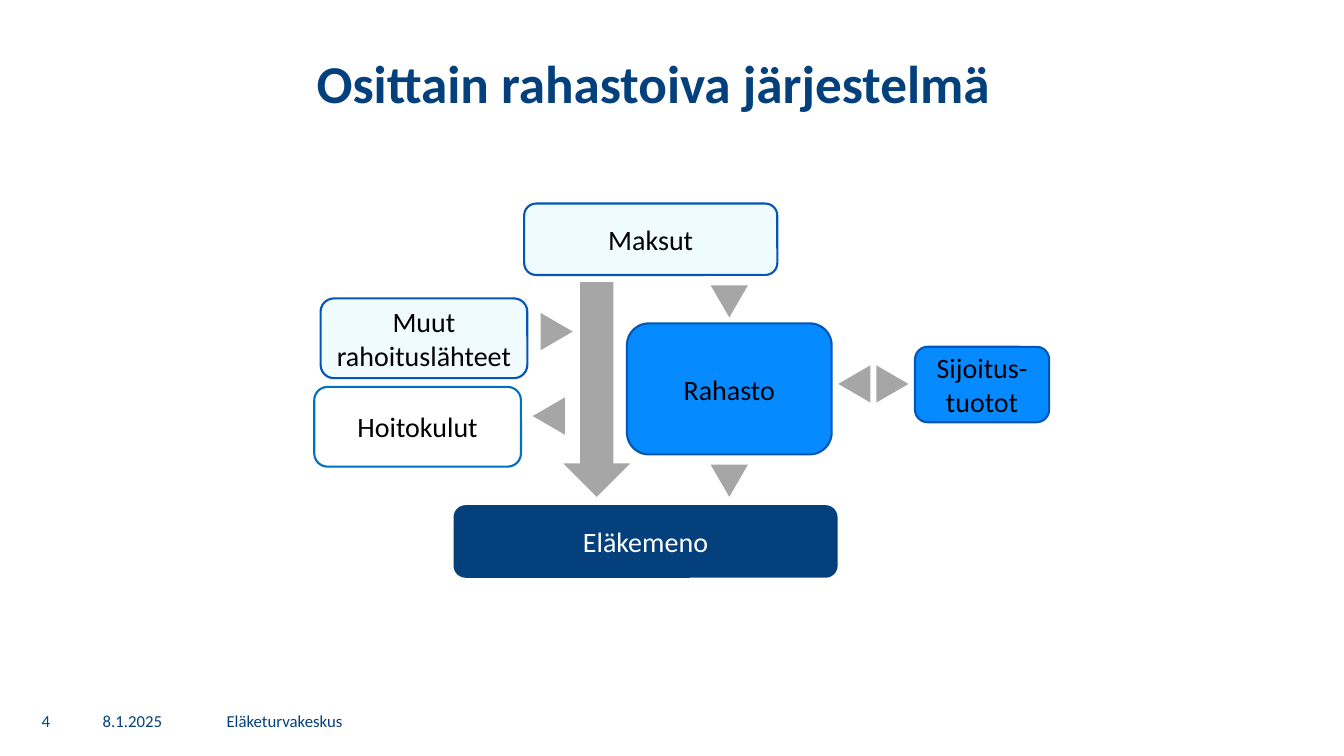
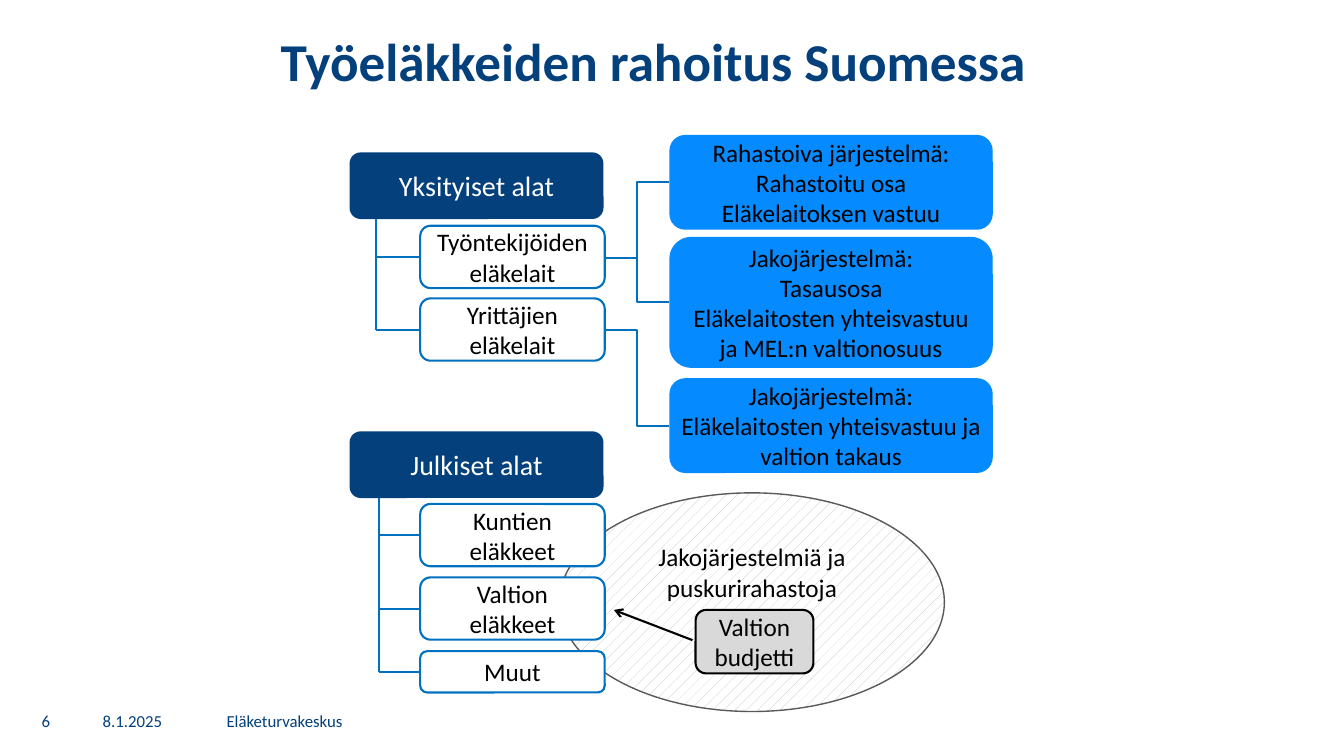
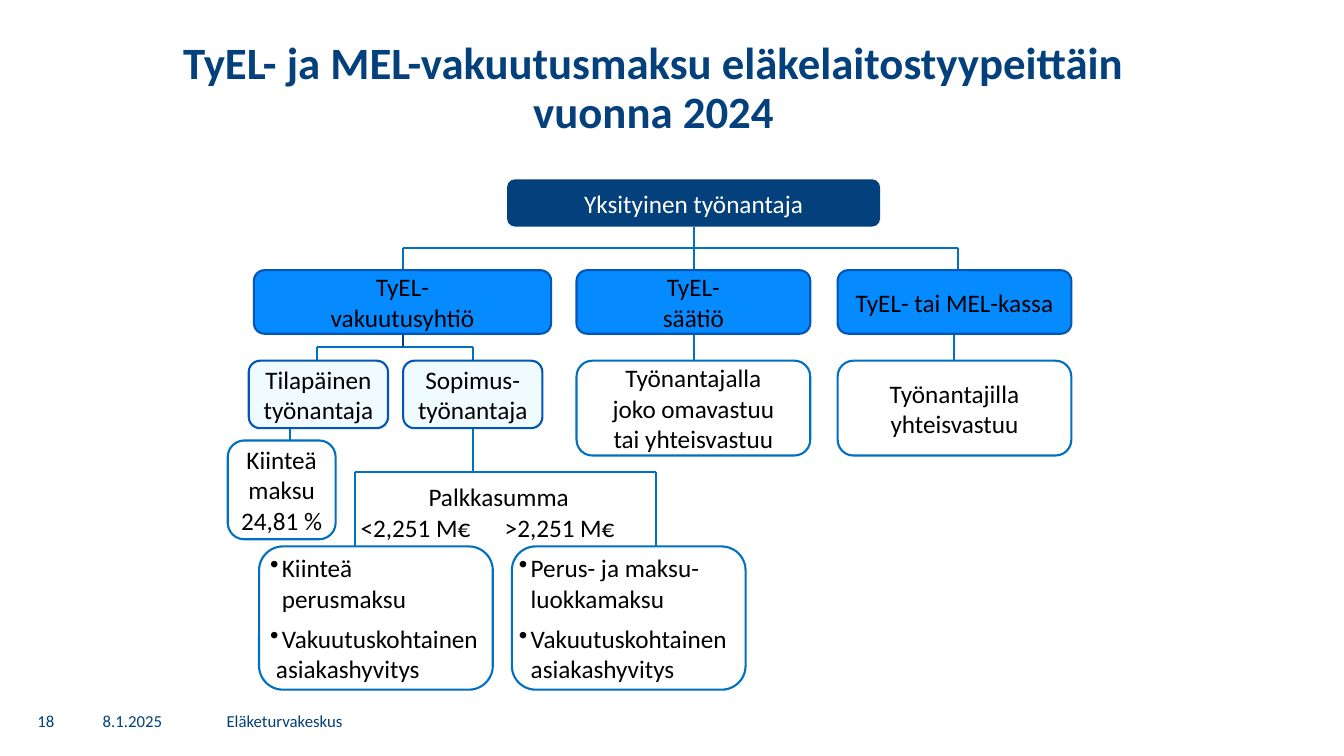
import pptx
import pptx.dml.color
import pptx.enum.dml
import pptx.enum.shapes
import pptx.enum.text
import pptx.oxml
import pptx.oxml.ns
import pptx.util

Cm = pptx.util.Cm
Pt = pptx.util.Pt
SHAPE = pptx.enum.shapes.MSO_SHAPE
CONNECTOR = pptx.enum.shapes.MSO_CONNECTOR
ALIGN = pptx.enum.text.PP_ALIGN
ANCHOR = pptx.enum.text.MSO_ANCHOR
color = pptx.dml.color.RGBColor.from_string

FONT = "Calibri"
NAVY, BLUE, PALE, WHITE, BLACK = "03407C", "058AFF", "F0FBFF", "FFFFFF", "000000"
EDGE, OUTLINE, GREY = "0356B5", "0070C0", "A6A6A6"

# Looks shared by the boxes of all slides
DARK = dict(fill=NAVY, text_color=WHITE)
STRONG = dict(fill=BLUE, line=EDGE)
LIGHT = dict(fill=PALE, line=EDGE)
PLAIN = dict(fill=WHITE, line=OUTLINE)


def add_box(slide, text, left, top, width, height, preset=SHAPE.ROUNDED_RECTANGLE,
            fill=None, line=None, line_width=1.5, size=18, bold=False, text_color=BLACK,
            align=ALIGN.CENTER, anchor=ANCHOR.MIDDLE, side=0.25, bottom=0.13, spacing=None):
    """Add a shape, or a text box when preset is None, with formatted text."""
    frame = Cm(left), Cm(top), Cm(width), Cm(height)
    if preset is None:
        shape = slide.shapes.add_textbox(*frame)
    else:
        shape = slide.shapes.add_shape(preset, *frame)
        shape.shadow.inherit = False
        if fill:
            shape.fill.solid()
            shape.fill.fore_color.rgb = color(fill)
        if line:
            shape.line.color.rgb = color(line)
            shape.line.width = Pt(line_width)
        else:
            shape.line.fill.background()
    text_frame = shape.text_frame
    text_frame.word_wrap = True
    text_frame.vertical_anchor = anchor
    text_frame.margin_left = text_frame.margin_right = Cm(side)
    text_frame.margin_top, text_frame.margin_bottom = Cm(0.13), Cm(bottom)
    text_frame.text = text
    for paragraph in text_frame.paragraphs:
        paragraph.alignment = align
        if spacing:
            paragraph.line_spacing = spacing
        for run in paragraph.runs:
            run.font.name = FONT
            run.font.size = Pt(size)
            run.font.bold = bold
            run.font.color.rgb = color(text_color)
    return shape


def add_line(slide, x1, y1, x2, y2, kind=CONNECTOR.STRAIGHT, line=OUTLINE, arrow=False):
    """Add a connector without shadow, with an arrowhead at its end if asked."""
    connector = slide.shapes.add_connector(kind, Cm(x1), Cm(y1), Cm(x2), Cm(y2))
    connector.line.color.rgb = color(line)
    connector.line.width = Pt(1.5)
    properties = connector._element.spPr
    if arrow:
        head = pptx.oxml.parse_xml(f'<a:tailEnd {pptx.oxml.ns.nsdecls("a")} type="arrow"/>')
        connector.line._get_or_add_ln().append(head)
    properties.append(pptx.oxml.parse_xml(f'<a:effectLst {pptx.oxml.ns.nsdecls("a")}/>'))


presentation = pptx.Presentation()
presentation.slide_width, presentation.slide_height = Cm(33.87), Cm(19.05)

# Titles and footers
slides = []
for number, title, title_top, title_height, title_size in [
    ("4", "Osittain rahastoiva järjestelmä", 1.32, 2, 38),
    ("6", "Työeläkkeiden rahoitus Suomessa", 0.76, 1.83, 38),
    ("18", "TyEL- ja MEL-vakuutusmaksu eläkelaitostyypeittäin\vvuonna 2024", 0.91, 2.82, 32),
]:
    slide = presentation.slides.add_slide(presentation.slide_layouts[6])
    add_box(slide, title, 0, title_top, 32.94, title_height, preset=None, size=title_size,
            bold=True, text_color=NAVY, anchor=ANCHOR.TOP, spacing=0.9)
    for text, left, width, align in [
        (number, 0.51, 1.3, ALIGN.CENTER),
        ("8.1.2025", 2.34, 2.87, ALIGN.LEFT),
        ("Eläketurvakeskus", 5.46, 26.06, ALIGN.LEFT),
    ]:
        add_box(slide, text, left, 17.65, width, 1.02, preset=None, size=12,
                text_color=NAVY, align=align)
    slides.append(slide)
fund_slide, finance_slide, premium_slide = slides

# Partly funded system: boxes
for text, left, top, width, height, look in [
    ("Maksut", 13.21, 5.13, 6.38, 1.8, LIGHT),
    ("Muut rahoituslähteet", 8.08, 7.52, 5.21, 2.01, LIGHT),
    ("Rahasto", 15.8, 8.15, 5.16, 3.3, STRONG),
    ("Sijoitus-\ntuotot", 23.06, 8.74, 3.38, 1.9, STRONG),
    ("Hoitokulut", 7.92, 9.75, 5.21, 2.01, PLAIN),
    ("Eläkemeno", 11.43, 12.73, 9.68, 1.83, DARK),
]:
    add_box(fund_slide, text, left, top, width, height, size=20, **look)

# Partly funded system: flow arrows
add_box(fund_slide, "", 14.2, 7.11, 1.68, 5.41, preset=SHAPE.DOWN_ARROW, fill=GREY)
for left, top, rotation in [
    (17.91, 7.19, 0), (17.91, 11.71, 0),
    (13.56, 7.95, 270), (22.02, 9.27, 270),
    (21.06, 9.27, 90), (13.36, 10.08, 90),
]:
    triangle = add_box(fund_slide, "", left, top, 0.94, 0.81,
                       preset=SHAPE.FLOWCHART_MERGE, fill=GREY)
    triangle.rotation = rotation

# Financing: buffer fund ellipse and state budget
ellipse = add_box(finance_slide, "Jakojärjestelmiä ja puskurirahastoja", 14.1, 12.42, 9.7, 5.51,
                  preset=SHAPE.OVAL, line="595959", line_width=1, bottom=1.65)
ellipse.fill.patterned()
ellipse.fill.pattern = pptx.enum.dml.MSO_PATTERN.PERCENT_10
ellipse.fill.fore_color.rgb = color("BFBFBF")
ellipse.fill.back_color.rgb = color(WHITE)
add_box(finance_slide, "Valtion budjetti", 17.53, 15.37, 2.97, 1.6, fill="D9D9D9", line=BLACK)
add_line(finance_slide, 17.45, 16.13, 15.47, 15.37, line=BLACK, arrow=True)

# Financing: each sector with its pension acts
for sector, sector_top, trunk, acts in [
    ("Yksityiset alat", 3.84, 9.47, [("Työntekijöiden eläkelait", 5.69, 1.57),
                                     ("Yrittäjien eläkelait", 7.52, 1.57)]),
    ("Julkiset alat", 10.87, 9.55, [("Kuntien eläkkeet", 12.7, 1.57),
                                    ("Valtion eläkkeet", 14.55, 1.57),
                                    ("Muut", 16.41, 1.04)]),
]:
    add_box(finance_slide, sector, 8.81, sector_top, 6.4, 1.68, size=20, **DARK)
    for text, top, height in acts:
        middle = top + height / 2
        add_line(finance_slide, trunk, middle, 10.59, middle)
        add_box(finance_slide, text, 10.59, top, 4.65, height, **PLAIN)
    add_line(finance_slide, trunk, sector_top + 1.68, trunk, middle)

# Financing: systems behind the private acts
for text, top, height, act_middle in [
    ("Rahastoiva järjestelmä:\nRahastoitu osa\nEläkelaitoksen vastuu", 3.4, 2.39, 6.5),
    ("Jakojärjestelmä:\nTasausosa\nEläkelaitosten yhteisvastuu\nja MEL:n valtionosuus",
     5.97, 3.3, 6.5),
    ("Jakojärjestelmä:\nEläkelaitosten yhteisvastuu ja valtion takaus", 9.53, 2.39, 8.31),
]:
    add_line(finance_slide, 15.24, act_middle, 16.87, top + height / 2, kind=CONNECTOR.ELBOW)
    add_box(finance_slide, text, 16.87, top, 8.15, height, fill=BLUE, side=0)

# Premium: tree lines
for x1, y1, x2, y2 in [
    (10.15, 6.25, 24.15, 6.25), (17.48, 5.72, 17.48, 6.81),
    (10.15, 6.25, 10.15, 6.81), (24.15, 6.25, 24.15, 6.81),
    (7.98, 8.74, 11.91, 8.74), (7.98, 8.74, 7.98, 9.09), (11.91, 8.74, 11.91, 9.09),
    (17.48, 8.41, 17.48, 9.09), (24.05, 8.41, 24.05, 9.09),
    (7.3, 10.69, 7.3, 11.1), (11.91, 10.69, 11.91, 11.9),
    (8.94, 11.9, 16.54, 11.9), (8.94, 11.9, 8.94, 13.82), (16.54, 11.9, 16.54, 13.82),
]:
    add_line(premium_slide, x1, y1, x2, y2)
add_line(premium_slide, 10.15, 8.41, 10.15, 8.74, line=NAVY)

# Premium: tree boxes
for text, left, top, width, height, look in [
    ("Yksityinen työnantaja", 12.78, 4.52, 9.4, 1.19, DARK),
    ("TyEL-\nvakuutusyhtiö", 6.4, 6.81, 7.49, 1.6, STRONG),
    ("TyEL-\nsäätiö", 14.53, 6.81, 5.89, 1.6, STRONG),
    ("TyEL- tai MEL-kassa", 21.11, 6.81, 5.89, 1.6, STRONG),
    ("Tilapäinen\ntyönantaja", 6.27, 9.09, 3.51, 1.7, LIGHT),
    ("Sopimus-\ntyönantaja", 10.16, 9.09, 3.51, 1.7, LIGHT),
    ("Työnantajalla\njoko omavastuu\ntai yhteisvastuu", 14.53, 9.09, 5.89, 2.39, PLAIN),
    ("Työnantajilla\nyhteisvastuu", 21.11, 9.09, 5.89, 2.39, PLAIN),
    ("Kiinteä\nmaksu\n24,81 %", 5.74, 11.1, 2.72, 2.49, PLAIN),
]:
    add_box(premium_slide, text, left, top, width, height, side=0.1, **look)

# Premium: payroll limits, the second one at a tab stop
payroll = add_box(premium_slide, "Palkkasumma\n<2,251 M€\t>2,251 M€", 8.84, 12.01, 7.77, 1.8,
                  preset=None, align=ALIGN.LEFT, anchor=ANCHOR.TOP)
heading, limits = payroll.text_frame.paragraphs
heading._p.get_or_add_pPr().set("marL", str(Cm(1.71)))
limits._p.get_or_add_pPr().append(pptx.oxml.parse_xml(
    f'<a:tabLst {pptx.oxml.ns.nsdecls("a")}><a:tab pos="{Cm(3.63)}" algn="l"/></a:tabLst>'))

# Premium: bulleted boxes
for left, side, last_margin, first_item in [
    (6.53, 0.1, 0.15, "Kiinteä\vperusmaksu"),
    (12.9, 0, 0.3, "Perus- ja maksu-\vluokkamaksu"),
]:
    box = add_box(premium_slide, first_item + "\nVakuutuskohtainen\nasiakashyvitys",
                  left, 13.77, 5.89, 3.61, side=side, align=ALIGN.LEFT, **PLAIN)
    *items, continuation = box.text_frame.paragraphs
    items[1].space_before = Pt(7)
    for item in items:
        properties = item._p.get_or_add_pPr()
        properties.set("marL", str(Cm(0.3)))
        properties.set("indent", str(Cm(-0.3)))
        properties.append(pptx.oxml.parse_xml(
            f'<a:buChar {pptx.oxml.ns.nsdecls("a")} char="•"/>'))
    continuation._p.get_or_add_pPr().set("marL", str(Cm(last_margin)))

presentation.save("out.pptx")
